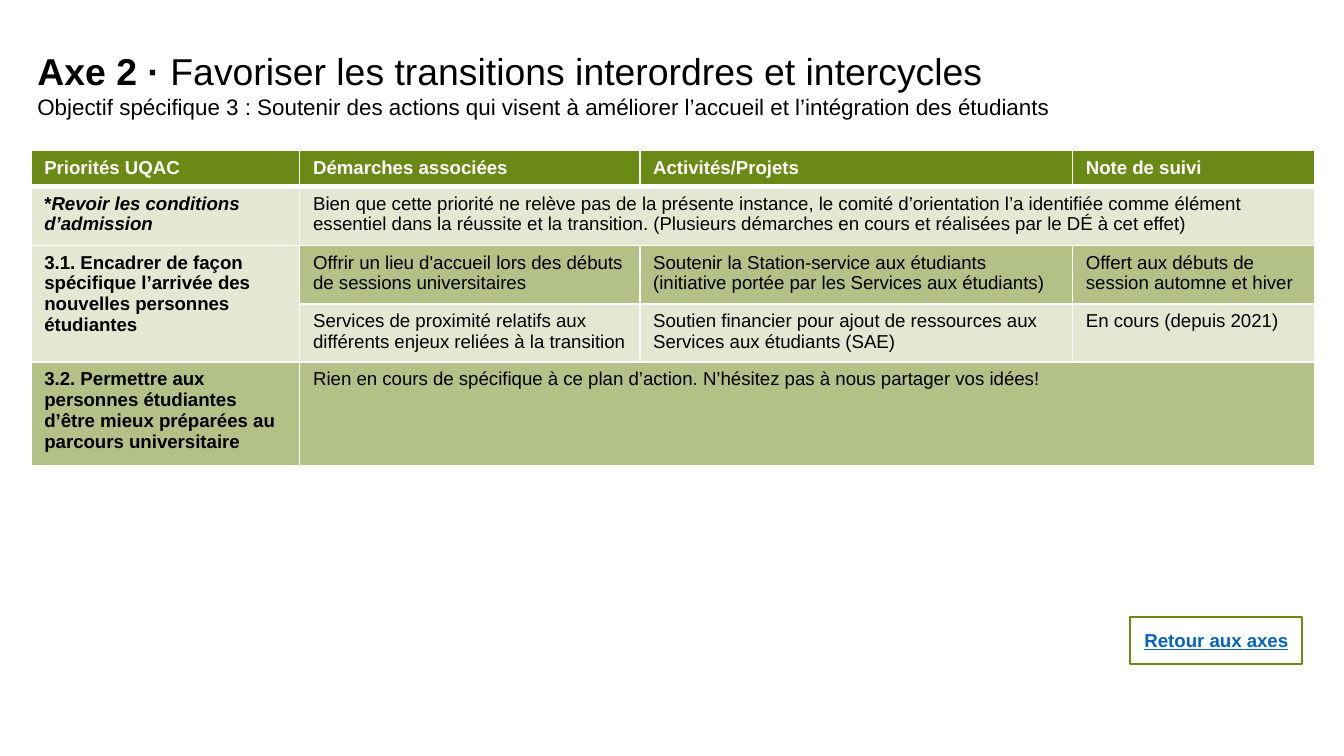
from lxml import etree
from pptx import Presentation
from pptx.dml.color import RGBColor
from pptx.enum.shapes import MSO_SHAPE
from pptx.enum.text import MSO_ANCHOR, PP_ALIGN
from pptx.oxml.ns import qn
from pptx.util import Inches, Pt

RECTANGLE = MSO_SHAPE.RECTANGLE
MIDDLE = MSO_ANCHOR.MIDDLE
CENTER = PP_ALIGN.CENTER
GREEN, SAGE, PALE = "6B8A15", "B3C186", "E3E8D3"
BLACK, WHITE, LINK_BLUE = "000000", "FFFFFF", "0563C1"


def color(value):
    return RGBColor.from_string(value)


def style(paragraph, size, text_color=BLACK, bold=None):
    paragraph.font.name = "Arial"
    paragraph.font.size = Pt(size)
    paragraph.font.color.rgb = color(text_color)
    paragraph.font.bold = bold


presentation = Presentation()
presentation.slide_width = Inches(10)
presentation.slide_height = Inches(10 * 9 / 16)
slide = presentation.slides.add_slide(presentation.slide_layouts[6])

title_box = slide.shapes.add_textbox(Inches(0.18), Inches(0.31), Inches(9.6), Inches(0.64))
title_box.text_frame.word_wrap = True
title = title_box.text_frame.paragraphs[0]
style(title, 20)
axis_run = title.add_run()
axis_run.text = "Axe 2 · "
axis_run.font.bold = True
title.add_run().text = "Favoriser les transitions interordres et intercycles"
objective = title_box.text_frame.add_paragraph()
objective.text = "Objectif spécifique 3 : Soutenir des actions qui visent à améliorer l’accueil et l’intégration des étudiants"
style(objective, 12)

button = slide.shapes.add_shape(RECTANGLE, Inches(8.41), Inches(4.59), Inches(1.28), Inches(0.35))
button.shadow.inherit = False
button.fill.solid()
button.fill.fore_color.rgb = color(WHITE)
button.line.color.rgb = color(GREEN)
button.line.width = Pt(1)
button.text_frame.word_wrap = False
button.text_frame.vertical_anchor = MIDDLE
button_label = button.text_frame.paragraphs[0]
button_label.text = "Retour aux axes"
button_label.alignment = CENTER
style(button_label, 10, LINK_BLUE, True)
button_label.font.underline = True

column_widths = [2, 2.53, 3.22, 1.8]
row_heights = [0.26, 0.44, 0.43, 0.43, 0.77]
rows = [
    ["Priorités UQAC", "Démarches associées", "Activités/Projets", "Note de suivi"],
    ["*Revoir les conditions d’admission",
     "Bien que cette priorité ne relève pas de la présente instance, le comité d’orientation l’a identifiée comme élément essentiel dans la réussite et la transition. (Plusieurs démarches en cours et réalisées par le DÉ à cet effet)",
     "", ""],
    ["3.1. Encadrer de façon spécifique l’arrivée des nouvelles personnes étudiantes",
     "Offrir un lieu d'accueil lors des débuts de sessions universitaires",
     "Soutenir la Station-service aux étudiants\n(initiative portée par les Services aux étudiants)",
     "Offert aux débuts de session automne et hiver"],
    ["",
     "Services de proximité relatifs aux différents enjeux reliées à la transition",
     "Soutien financier pour ajout de ressources aux Services aux étudiants (SAE)",
     "En cours (depuis 2021)"],
    ["3.2. Permettre aux personnes étudiantes d’être mieux préparées au parcours universitaire",
     "Rien en cours de spécifique à ce plan d’action. N’hésitez pas à nous partager vos idées!",
     "", ""],
]
row_fills = [GREEN, PALE, SAGE, PALE, SAGE]

table = slide.shapes.add_table(
    len(rows), len(column_widths), Inches(0.23), Inches(1.12),
    Inches(sum(column_widths)), Inches(sum(row_heights))).table
for column, width in zip(table.columns, column_widths):
    column.width = Inches(width)
for row, height in zip(table.rows, row_heights):
    row.height = Inches(height)

for row_index, texts in enumerate(rows):
    for column_index, text in enumerate(texts):
        cell = table.cell(row_index, column_index)
        properties = cell._tc.get_or_add_tcPr()
        for side in ("L", "R", "T", "B"):
            header_rule = (row_index, side) in ((0, "B"), (1, "T"))
            border = etree.SubElement(properties, qn(f"a:ln{side}"), w=str(Pt(3 if header_rule else 1)))
            border_fill = etree.SubElement(border, qn("a:solidFill"))
            etree.SubElement(border_fill, qn("a:srgbClr"), val=WHITE)
        cell.fill.solid()
        first_priority_cell = row_index == 2 and column_index == 0
        cell.fill.fore_color.rgb = color(PALE if first_priority_cell else row_fills[row_index])
        cell.text = text
        for paragraph in cell.text_frame.paragraphs:
            style(paragraph, 10, WHITE if row_index == 0 else BLACK, row_index == 0 or column_index == 0)

admission = table.cell(1, 0).text_frame.paragraphs[0]
admission.runs[0].text = "*"
admission_run = admission.add_run()
admission_run.text = "Revoir les conditions d’admission"
admission_run.font.italic = True

table.cell(1, 1).merge(table.cell(1, 3))
table.cell(2, 0).merge(table.cell(3, 0))
table.cell(4, 1).merge(table.cell(4, 3))

presentation.save("out.pptx")
